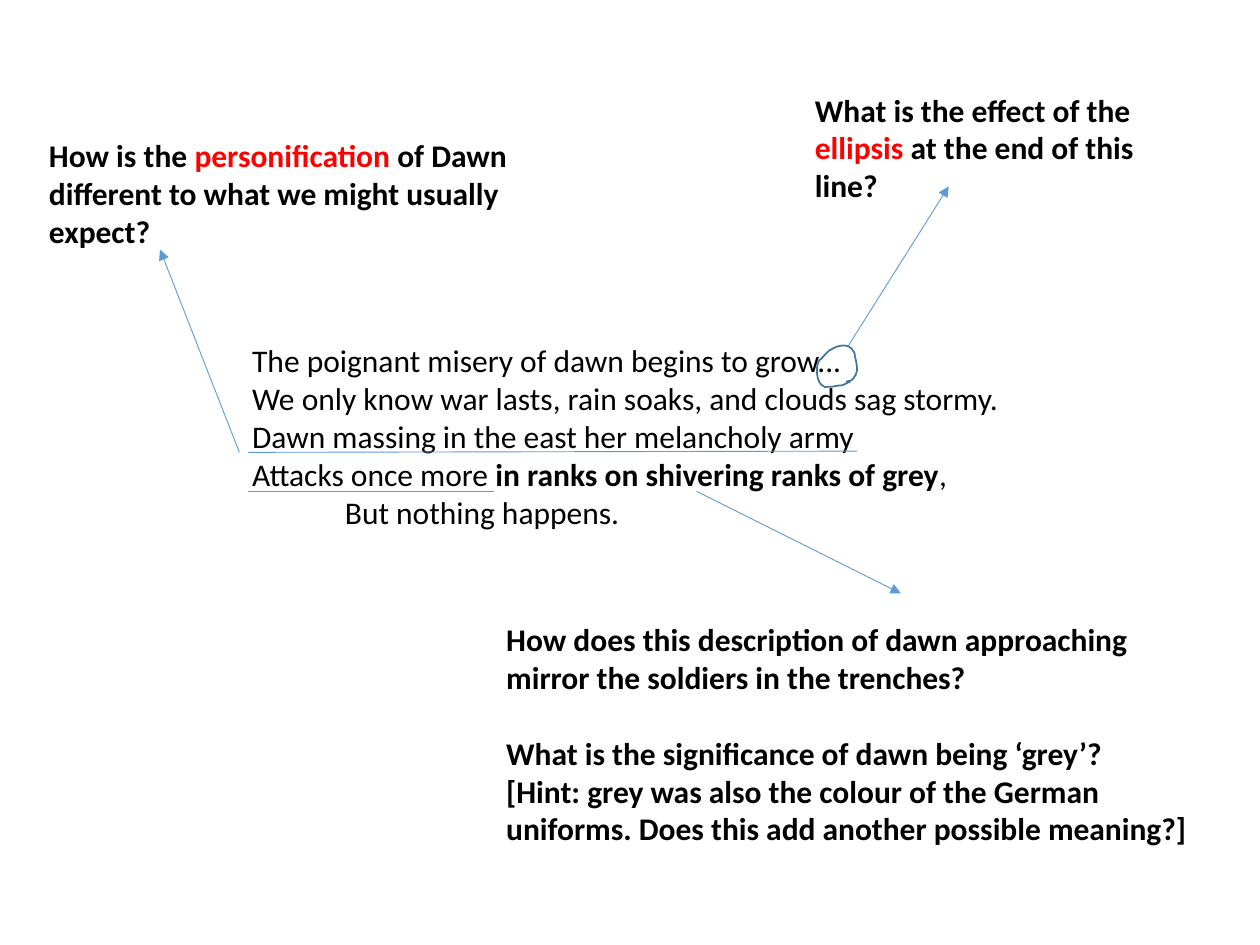
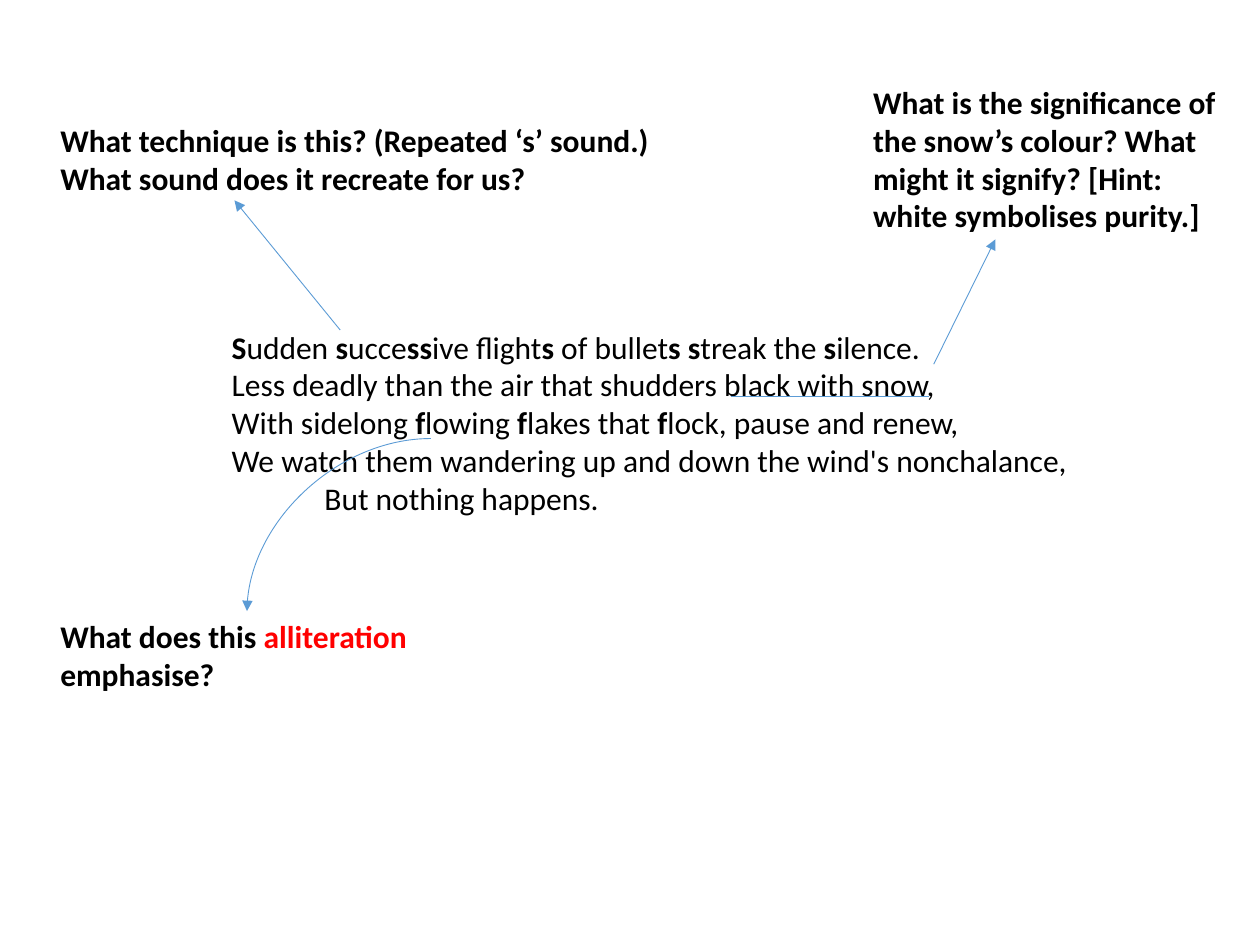
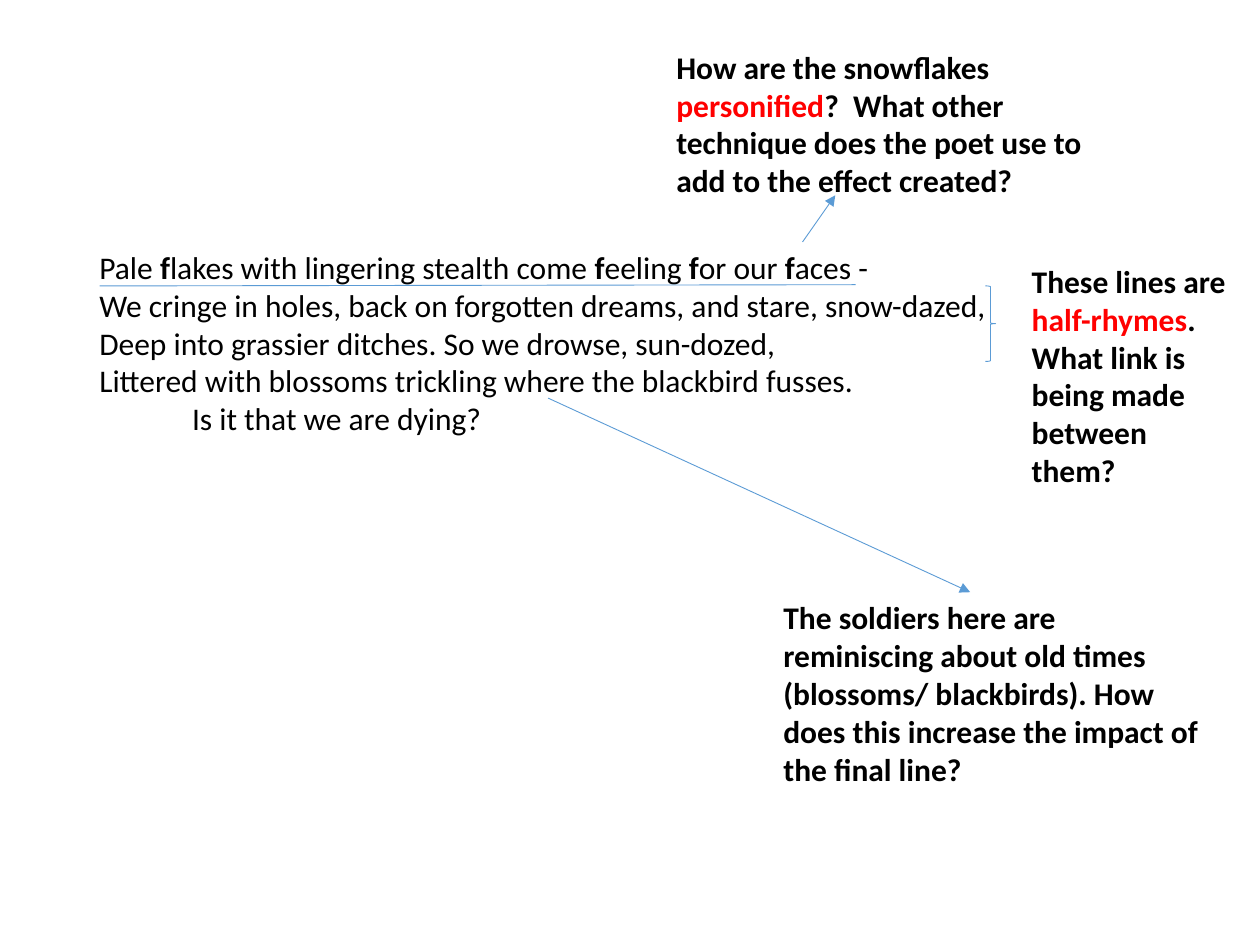
from lxml import etree
from pptx import Presentation
from pptx.dml.color import RGBColor
from pptx.enum import shapes, text
from pptx.oxml.ns import qn
from pptx.util import Pt

COLOURS = {"paper": "FFFFFF", "ink": "000000", "term": "FF0000", "mark": "5B9BD5", "ring": "43739E"}
FONT = "Calibri"
TEXT_SIZE = 18
LINE_HEIGHT = 22
REFRAIN_INDENT = 53
CURVE_STEPS = 6

RING_START = (8.6, 2.2)
RING_CURVES = [
    ((6.5, 2.9), (5, 5), (3.6, 6.5)),
    ((2.9, 7.2), (2.2, 7.9), (1.4, 8.6)),
    ((0, 11.5), (0.7, 10.1), (0, 13)),
    ((0, 15.1), (0, 18.7), (1.4, 20.9)),
    ((1.4, 21.6), (2.2, 21.6), (2.2, 22.3)),
    ((2.9, 23), (3.6, 23), (4.3, 23.8)),
    ((7.2, 23.8), (9.4, 23.8), (12.2, 23)),
    ((13.7, 23), (14.4, 23), (15.8, 22.3)),
    ((25.2, 18), (11.5, 22.3), (19.4, 20.2)),
    ((20.2, 19.4), (20.9, 19.4), (20.9, 18.7)),
    ((24.5, 15.1), (22.3, 9.4), (21.6, 5.8)),
    ((21.6, 5), (21.6, 4.3), (20.9, 3.6)),
    ((20.2, 2.2), (19.4, 1.4), (18, 0.7)),
    ((15.1, -0.7), (10.8, 0.7), RING_START),
]


def colour(name):
    return RGBColor.from_string(COLOURS[name])


def add_slide(presentation):
    slide = presentation.slides.add_slide(presentation.slide_layouts[6])
    slide.background.fill.solid()
    slide.background.fill.fore_color.rgb = colour("paper")
    return slide


def outline(shape, name, width):
    shape.shadow.inherit = False
    shape.fill.background()
    shape.line.color.rgb = colour(name)
    shape.line.width = Pt(width)


def add_line(slide, box, ends, arrow=False, curved=False):
    left, top = box[:2]
    x1, y1, x2, y2 = ends
    kind = shapes.MSO_CONNECTOR.CURVE if curved else shapes.MSO_CONNECTOR.STRAIGHT
    connector = slide.shapes.add_connector(
        kind, Pt(left + x1), Pt(top + y1), Pt(left + x2), Pt(top + y2))
    connector.line.color.rgb = colour("mark")
    connector.line.width = Pt(0.5)
    properties = connector._element.spPr
    if arrow:
        etree.SubElement(properties.find(qn("a:ln")), qn("a:tailEnd"), type="triangle")
    if curved:
        properties.find(qn("a:prstGeom")).set("prst", "curvedConnector2")
    etree.SubElement(properties, qn("a:effectLst"))


def add_text(slide, box, lines, bold, accent):
    frame = slide.shapes.add_textbox(*map(Pt, box)).text_frame
    frame.word_wrap = True
    frame.auto_size = text.MSO_AUTO_SIZE.SHAPE_TO_FIT_TEXT
    for number, line in enumerate(lines):
        paragraph = frame.add_paragraph() if number else frame.paragraphs[0]
        for position, words in enumerate(line.split("*")):
            if words:
                run = paragraph.add_run()
                run.text = words
                run.font.name = FONT
                run.font.size = Pt(TEXT_SIZE)
                run.font.bold = bold
                run.font.color.rgb = colour("ink")
                if position % 2:
                    accent(run.font)
    return frame.paragraphs


def make_bold(font):
    font.bold = True


def make_term(font):
    font.color.rgb = colour("term")


def add_stanza(slide, box, lines, underlines):
    refrain = add_text(slide, box, lines, False, make_bold)[-1]
    refrain._p.get_or_add_pPr().set("marL", str(Pt(REFRAIN_INDENT)))
    for ends in underlines:
        add_line(slide, box, ends)


def add_question(slide, box, lines, arrow=None, curved=False):
    paragraphs = add_text(slide, box, lines, True, make_term)
    if arrow:
        add_line(slide, box, arrow, arrow=True, curved=curved)
    return paragraphs


def add_ring(slide, left, top):
    points = []
    start = RING_START
    for first, second, end in RING_CURVES:
        for step in range(1, CURVE_STEPS + 1):
            t = step / CURVE_STEPS
            s = 1 - t
            points.append(tuple(
                Pt(s**3 * a + 3 * s * s * t * b + 3 * s * t * t * c + t**3 * d)
                for a, b, c, d in zip(start, first, second, end)))
        start = end
    builder = slide.shapes.build_freeform(*map(Pt, RING_START))
    builder.add_line_segments(points, close=True)
    outline(builder.convert_to_shape(Pt(left), Pt(top)), "ring", 1)


def build_dawn(slide):
    box = (137, 191.5, 453, 116.6)
    add_stanza(slide, box, [
        "The poignant misery of dawn begins to grow...",
        "We only know war lasts, rain soaks, and clouds sag stormy.",
        "Dawn massing in the east her melancholy army",
        "Attacks once more *in ranks on shivering ranks of grey*,",
        "But nothing happens.",
    ], [(5, 67, 352.8, 66.3), (5, 89.3, 145.4, 89.3)])
    add_ring(slide, box[0] + 329.8, box[1] + 5.8)
    add_question(slide, (458.6, 48.2, 229.7, 72.7),
                 ["What is the effect of the *ellipsis* at the end of this line?"],
                 (25.9, 149.8, 83.5, 58.3))
    add_question(slide, (20.9, 74.2, 289.4, 72.7),
                 ["How is the *personification* of Dawn different to what we might usually expect?"],
                 (115.9, 184.3, 70.6, 68.4))
    paragraphs = add_question(slide, (282.2, 350.6, 406.1, 159.8), [
        "How does this description of dawn approaching mirror the soldiers in the trenches?",
        "What is the significance of dawn being ‘grey’?",
        "[Hint: grey was also the colour of the German uniforms. "
        "Does this add another possible meaning?]",
    ], (115.9, -69.8, 232.6, -11.5))
    paragraphs[1].space_before = Pt(LINE_HEIGHT)


def build_snow(slide):
    add_stanza(slide, (125.3, 183.6, 496.1, 116.6), [
        "*S*udden *s*ucce*ss*ive flight*s* of bullet*s s*treak the *s*ilence.",
        "Less deadly than the air that shudders black with snow,",
        "With sidelong *f*lowing *f*lakes that *f*lock, pause and renew,",
        "We watch them wandering up and down the wind's nonchalance,",
        "But nothing happens.",
    ], [(292.3, 43.2, 405.4, 43.2)])
    add_question(slide, (27.4, 65.5, 372.2, 51.1), [
        "What technique is this? (Repeated ‘s’ sound.)",
        "What sound does it recreate for us?",
    ], (167, 123.1, 106.6, 49))
    add_question(slide, (491.8, 43.9, 211.7, 94.3),
                 ["What is the significance of the snow’s colour? "
                  "What might it signify? [Hint: white symbolises purity.]"],
                 (41.8, 164.2, 77, 92.9))
    add_question(slide, (27.4, 349.2, 227.5, 51.1),
                 ["What does this *alliteration *emphasise?"],
                 (218.9, -98.6, 113.8, 0), curved=True)


def build_flakes(slide):
    box = (49.7, 138.2, 573.8, 116.6)
    add_stanza(slide, box, [
        "Pale *f*lakes with lingering stealth come *f*eeling *f*or our *f*aces -",
        "We cringe in holes, back on forgotten dreams, and stare, snow-dazed,",
        "Deep into grassier ditches. So we drowse, sun-dozed,",
        "Littered with blossoms trickling where the blackbird fusses.",
        "Is it that we are dying?",
    ], [(7.2, 25.2, 439.2, 24.5)])
    brace = slide.shapes.add_shape(
        shapes.MSO_SHAPE.RIGHT_BRACE,
        Pt(box[0] + 513.4), Pt(box[1] + 25.2), Pt(5.8), Pt(43.2))
    outline(brace, "mark", 0.5)
    add_question(slide, (379.4, 23.8, 272.9, 94.3),
                 ["How are the snowflakes *personified*?  What other technique "
                  "does the poet use to add to the effect created?"],
                 (79.2, 114.5, 97.9, 87.8))
    add_question(slide, (582.5, 146.2, 127.4, 138.2),
                 ["These lines are *half-rhymes*. What link is being made between them?"])
    add_question(slide, (440.6, 338.4, 256.3, 116.6),
                 ["The soldiers here are reminiscing about old times (blossoms/ blackbirds). "
                  "How does this increase the impact of the final line?"],
                 (-127.4, -110.9, 113.8, 0))


def main():
    presentation = Presentation()
    presentation.slide_width = Pt(720)
    presentation.slide_height = Pt(540)
    for build in (build_dawn, build_snow, build_flakes):
        build(add_slide(presentation))
    presentation.save("out.pptx")


if __name__ == "__main__":
    main()
